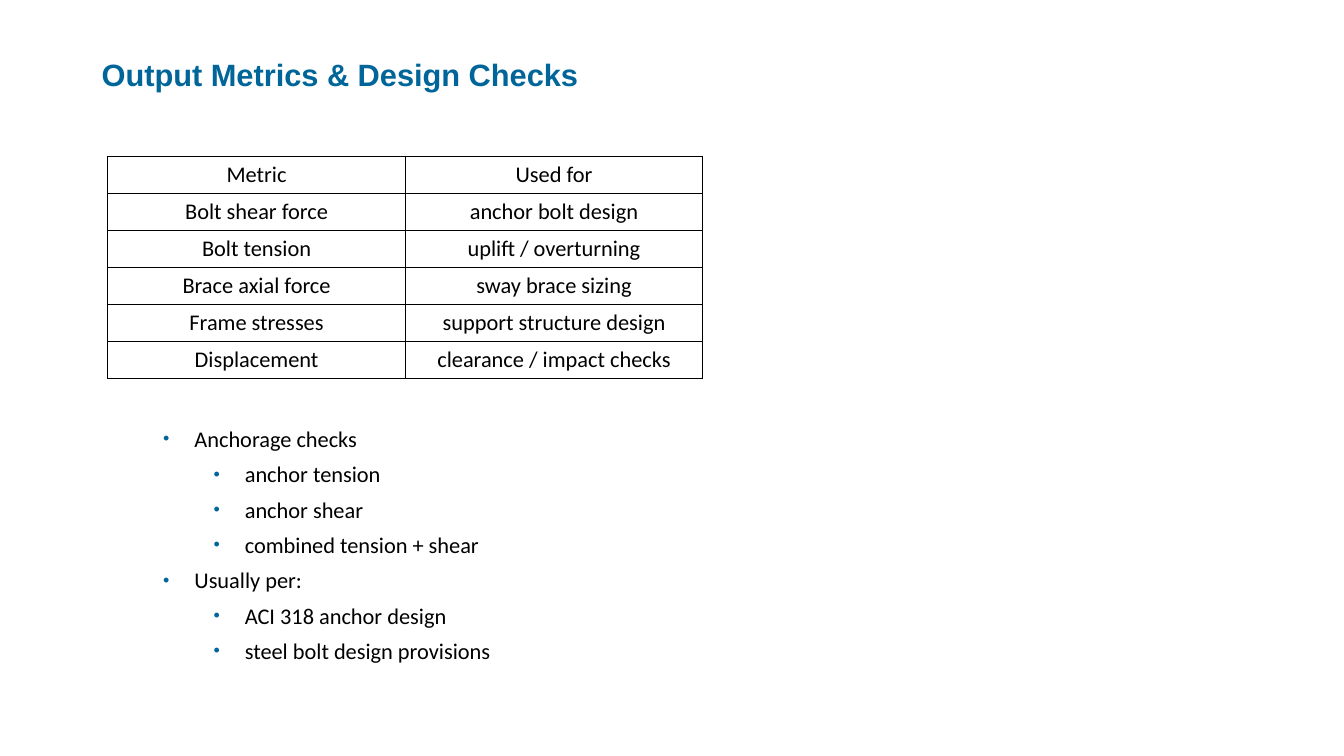
"""Build the Output Metrics & Design Checks slide."""
from lxml import etree
from pptx import Presentation
from pptx.dml.color import RGBColor
from pptx.enum.text import MSO_ANCHOR, MSO_AUTO_SIZE, PP_ALIGN
from pptx.oxml.ns import qn
from pptx.util import Pt

CENTER, MIDDLE = PP_ALIGN.CENTER, MSO_ANCHOR.MIDDLE
FIT_SHAPE = MSO_AUTO_SIZE.SHAPE_TO_FIT_TEXT

TITLE = "Output Metrics & Design Checks"
METRICS = [
    ("Metric", "Used for"),
    ("Bolt shear force", "anchor bolt design"),
    ("Bolt tension", "uplift / overturning"),
    ("Brace axial force", "sway brace sizing"),
    ("Frame stresses", "support structure design"),
    ("Displacement", "clearance / impact checks"),
]
CHECKS = [
    ("Anchorage checks", ["anchor tension", "anchor shear", "combined tension + shear"]),
    ("Usually per:", ["ACI 318 anchor design", "steel bolt design provisions"]),
]

ACCENT, INK = "006699", "000000"
THEME = {
    "title": {"name": "Arial", "size": Pt(22), "bold": True, "color": ACCENT},
    "body": {"name": "Calibri", "size": Pt(16), "bold": False, "color": INK},
    "border": Pt(1),
    "gap": Pt(3),
}

EMU_PER_PX = 9144
PAGE_SIZE = (1333, 750)
TITLE_BOX = (91, 50, 499, 47)
TABLE_ORIGIN = (107, 155)
COLUMN_WIDTH, ROW_HEIGHT = 295, 36
CHECKS_BOX = (152, 417, 515, 284)
HANG, LEVEL_STEP = 31, 50


def emu(*lengths):
    return [length * EMU_PER_PX for length in lengths]


def apply(target, values):
    for name, value in values.items():
        setattr(target, name, value)


def write(para, text, style):
    span = para.add_run()
    span.text = text
    apply(span.font, {name: style[name] for name in ("name", "size", "bold")})
    span.font.color.rgb = RGBColor.from_string(style["color"])


def add_box(page, bounds, wrap):
    frame = page.shapes.add_textbox(*emu(*bounds)).text_frame
    apply(frame, {"word_wrap": wrap, "auto_size": FIT_SHAPE})
    return frame


def add_color(parent, color):
    etree.SubElement(parent, qn("a:srgbClr"), val=color)


def add_borders(cell):
    properties = cell._tc.get_or_add_tcPr()
    for position, side in enumerate(("lnL", "lnR", "lnT", "lnB")):
        line = etree.Element(qn(f"a:{side}"), w=str(THEME["border"]))
        add_color(etree.SubElement(line, qn("a:solidFill")), INK)
        properties.insert(position, line)


def add_metrics(page):
    rows, columns = len(METRICS), len(METRICS[0])
    size = (columns * COLUMN_WIDTH, rows * ROW_HEIGHT)
    table = page.shapes.add_table(rows, columns, *emu(*TABLE_ORIGIN, *size)).table
    apply(table, {"first_row": False, "horz_banding": False})
    for row, texts in enumerate(METRICS):
        for column, text in enumerate(texts):
            cell = table.cell(row, column)
            cell.vertical_anchor = MIDDLE
            cell.fill.background()
            add_borders(cell)
            para = cell.text_frame.paragraphs[0]
            para.alignment = CENTER
            write(para, text, THEME["body"])


def add_bullet(para, level):
    properties = para._p.get_or_add_pPr()
    margin, indent = emu(HANG + level * LEVEL_STEP, -HANG)
    properties.set("marL", str(margin))
    properties.set("indent", str(indent))
    add_color(etree.SubElement(properties, qn("a:buClr")), ACCENT)
    etree.SubElement(properties, qn("a:buSzPct"), val="80000")
    etree.SubElement(properties, qn("a:buFont"), typeface="Arial")
    etree.SubElement(properties, qn("a:buChar"), char="•")


def add_checks(page):
    frame = add_box(page, CHECKS_BOX, True)
    lines = [
        (text, level)
        for heading, details in CHECKS
        for text, level in [(heading, 0)] + [(detail, 1) for detail in details]
    ]
    for index, (text, level) in enumerate(lines):
        para = frame.add_paragraph() if index else frame.paragraphs[0]
        add_bullet(para, level)
        before = THEME["gap"] if index else Pt(0)
        apply(para, {"level": level, "space_before": before, "space_after": THEME["gap"]})
        write(para, text, THEME["body"])


def main():
    deck = Presentation()
    deck.slide_width, deck.slide_height = emu(*PAGE_SIZE)
    page = deck.slides.add_slide(deck.slide_layouts[6])
    write(add_box(page, TITLE_BOX, False).paragraphs[0], TITLE, THEME["title"])
    add_metrics(page)
    add_checks(page)
    deck.save("out.pptx")


if __name__ == "__main__":
    main()
